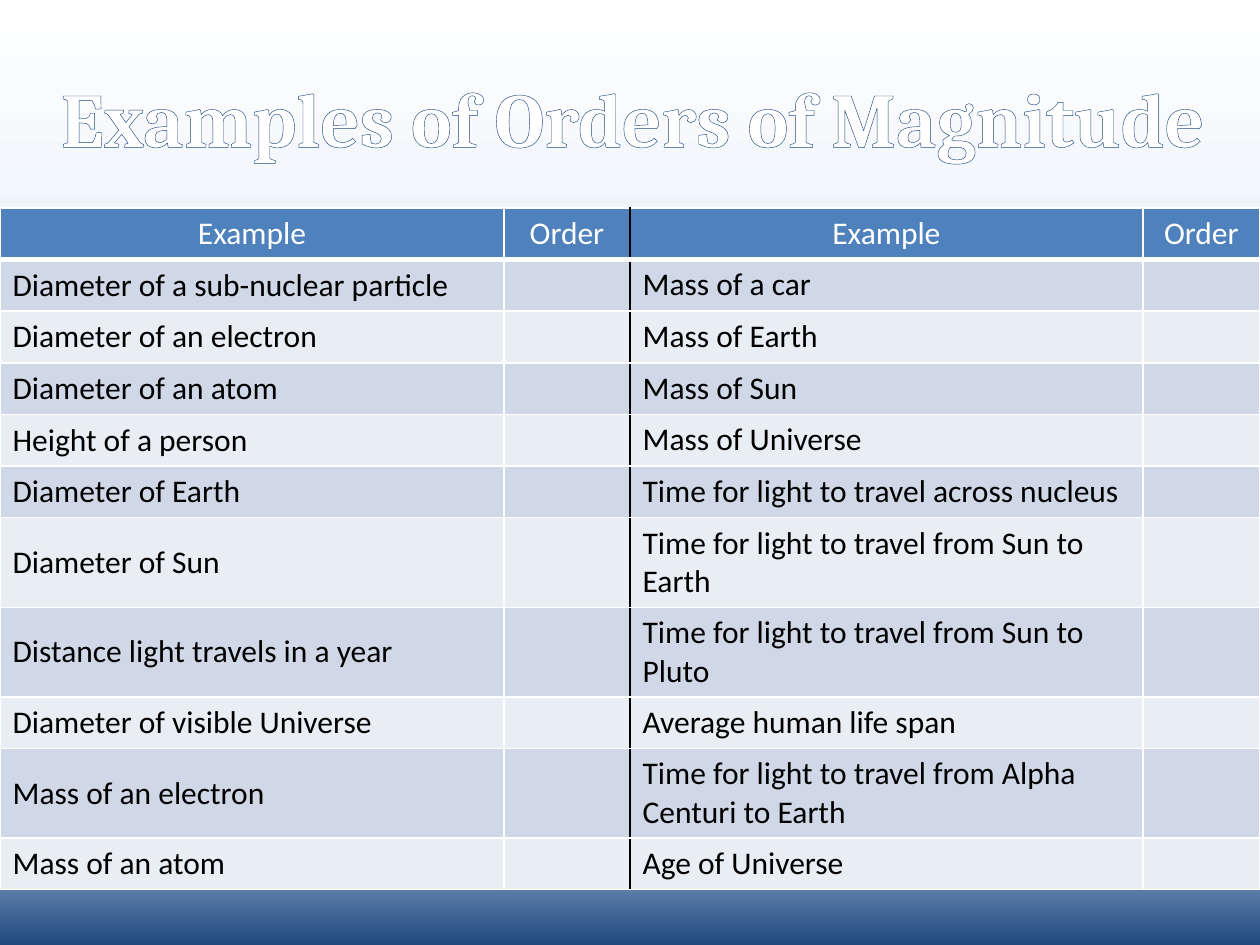
from lxml import etree
from pptx import Presentation
from pptx.dml.color import RGBColor
from pptx.enum.text import MSO_ANCHOR, PP_ALIGN
from pptx.oxml.ns import qn
from pptx.util import Inches, Pt

CENTER, LEFT = PP_ALIGN.CENTER, PP_ALIGN.LEFT
MIDDLE, TOP = MSO_ANCHOR.MIDDLE, MSO_ANCHOR.TOP
WHITE, BLACK, NAVY, BLUE = "FFFFFF", "000000", "1F497D", "4F81BD"
BANDS = ("D0D8E8", "E9EDF4")
STOPS = ((0, NAVY), (16, "C6D9F1"), (100, WHITE))
WIDTHS = (4, 1, 4.07, 0.93)
HEAD = ("Example", "Order") * 2
PAIRS = (
    ("Diameter of a sub-nuclear particle", "Mass of a car"),
    ("Diameter of an electron", "Mass of Earth"),
    ("Diameter of an atom", "Mass of Sun"),
    ("Height of a person", "Mass of Universe"),
    ("Diameter of Earth", "Time for light to travel across nucleus"),
    ("Diameter of Sun", "Time for light to travel from Sun to Earth"),
    ("Distance light travels in a year", "Time for light to travel from Sun to Pluto"),
    ("Diameter of visible Universe", "Average human life span"),
    ("Mass of an electron", "Time for light to travel from Alpha Centuri to Earth"),
    ("Mass of an atom", "Age of Universe"),
)


def rgb(code):
    """Turn a hex string into a colour."""
    return RGBColor.from_string(code)


def add_hex(parent, code):
    """Append a plain colour element."""
    etree.SubElement(parent, qn("a:srgbClr"), val=code)


def add_line(parent, tag, code, width):
    """Append a solid line element and return it."""
    line = etree.SubElement(parent, qn(tag), w=str(Pt(width)))
    add_hex(etree.SubElement(line, qn("a:solidFill")), code)
    return line


def add_run(para, text, size, font, color, bold=False):
    """Add one formatted run and return it."""
    run = para.add_run()
    run.text = text
    run.font.size = Pt(size)
    run.font.name = font
    run.font.bold = bold
    run.font.color.rgb = rgb(color)
    return run


def paint_back(slide):
    """Fill the background with an upward gradient."""
    fill = slide.background.fill
    fill.gradient()
    fill.gradient_angle = 90
    stops = next(slide.element.iter(qn("a:gsLst")))
    for stop in list(stops):
        stops.remove(stop)
    for place, code in STOPS:
        add_hex(etree.SubElement(stops, qn("a:gs"), pos=str(place * 1000)), code)


def set_title(slide, text):
    """Place the title and give its letters an outline."""
    title = slide.shapes.title
    title.left, title.top = Inches(0.26), Inches(0.3)
    title.width, title.height = Inches(9.53), Inches(1.25)
    frame = title.text_frame
    frame.word_wrap = True
    frame.vertical_anchor = MIDDLE
    para = frame.paragraphs[0]
    para.alignment = CENTER
    run = add_run(para, text, 44, "Cambria", WHITE, True)
    props = run.font.fill._xPr
    props.insert(0, add_line(props, "a:ln", NAVY, 2.48))


def set_cell(cell, text, row, col):
    """Border, fill and write one table cell."""
    head = row == 0
    props = cell._tc.get_or_add_tcPr()
    add_line(props, "a:lnL", BLACK if col == 2 else WHITE, 1)
    add_line(props, "a:lnR", BLACK if col == 1 else WHITE, 1)
    add_line(props, "a:lnT", WHITE, 1)
    add_line(props, "a:lnB", WHITE, 3 if head else 1)
    cell.fill.solid()
    cell.fill.fore_color.rgb = rgb(BLUE if head else BANDS[(row - 1) % 2])
    cell.vertical_anchor = MIDDLE if col == 0 and not head else TOP
    para = cell.text_frame.paragraphs[0]
    para.alignment = CENTER if head else LEFT
    para.font.size = Pt(18)
    if text:
        add_run(para, text, 18, "Calibri", WHITE if head else BLACK)


def add_grid(slide):
    """Add the table of examples and empty orders."""
    rows = [HEAD] + [(left, "", right, "") for left, right in PAIRS]
    high = 0.41
    table = slide.shapes.add_table(
        len(rows), len(WIDTHS), Inches(0), Inches(1.65), Inches(10), Inches(high * len(rows))
    ).table
    for col, width in zip(table.columns, WIDTHS):
        col.width = Inches(width)
    for r, texts in enumerate(rows):
        table.rows[r].height = Inches(high)
        for c, text in enumerate(texts):
            set_cell(table.cell(r, c), text, r, c)


def main():
    """Build and save the slide."""
    deck = Presentation()
    deck.slide_width, deck.slide_height = Inches(10), Inches(7.5)
    slide = deck.slides.add_slide(deck.slide_layouts[5])
    paint_back(slide)
    set_title(slide, "Examples of Orders of Magnitude")
    add_grid(slide)
    deck.save("out.pptx")


if __name__ == "__main__":
    main()
